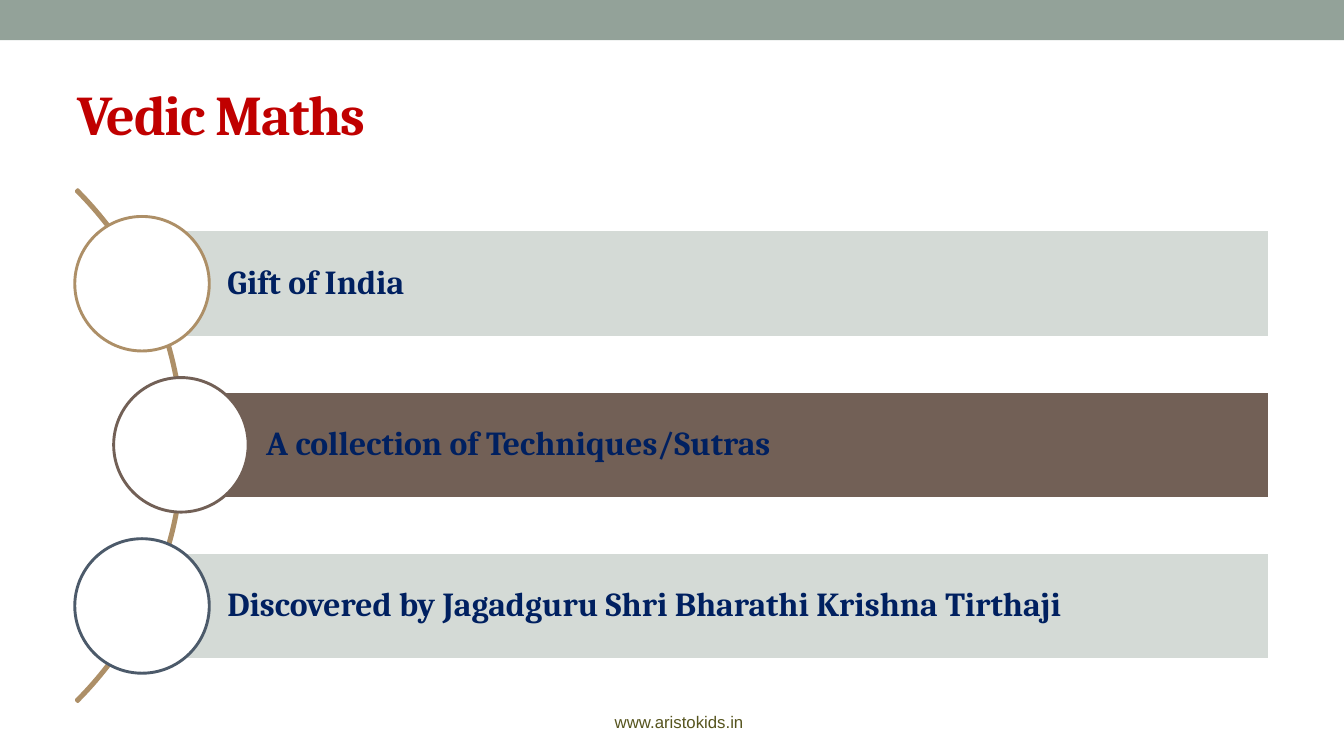
from dataclasses import dataclass

from pptx import Presentation
from pptx.dml.color import RGBColor
from pptx.enum.shapes import MSO_SHAPE
from pptx.enum.text import MSO_ANCHOR, PP_ALIGN
from pptx.util import Cm, Pt


@dataclass(frozen=True)
class Theme:
    band: str = "93A299"
    white: str = "FFFFFF"
    title: str = "C00000"
    text: str = "002060"
    footer: str = "56541E"
    tan: str = "AD8F67"
    brown: str = "726056"
    slate: str = "4C5A6A"
    pale: str = "D4DAD6"
    heading_font: str = "Cambria"
    footer_font: str = "Arial"
    title_size: float = 40
    text_size: float = 24
    footer_size: float = 12
    line_width: float = 2.08


class SlideBuilder:
    def __init__(self, slide, theme):
        self.slide = slide
        self.theme = theme

    def shape(self, kind, left, top, width, height, fill=None, line=None):
        shape = self.slide.shapes.add_shape(
            kind, Cm(left), Cm(top), Cm(width), Cm(height))
        shape.shadow.inherit = False
        if fill:
            shape.fill.solid()
            shape.fill.fore_color.rgb = RGBColor.from_string(fill)
        else:
            shape.fill.background()
        if line:
            shape.line.color.rgb = RGBColor.from_string(line)
            shape.line.width = Pt(self.theme.line_width)
        else:
            shape.line.fill.background()
        return shape

    def set_text(self, shape, text, font, size, color, bold=False,
                 align=PP_ALIGN.LEFT):
        frame = shape.text_frame
        frame.word_wrap = True
        frame.vertical_anchor = MSO_ANCHOR.MIDDLE
        paragraph = frame.paragraphs[0]
        paragraph.text = text
        paragraph.alignment = align
        paragraph.font.name = font
        paragraph.font.size = Pt(size)
        paragraph.font.bold = bold
        paragraph.font.color.rgb = RGBColor.from_string(color)
        return paragraph

    def title(self, text, left, top, width, height):
        theme = self.theme
        title = self.slide.shapes.title
        title.left, title.top = Cm(left), Cm(top)
        title.width, title.height = Cm(width), Cm(height)
        paragraph = self.set_text(title, text, theme.heading_font,
                                  theme.title_size, theme.title, bold=True)
        # Tighten the letters by one point
        paragraph.runs[0].font._element.set("spc", "-100")

    def footer(self, text, left, top, width, height):
        theme = self.theme
        box = self.slide.shapes.add_textbox(
            Cm(left), Cm(top), Cm(width), Cm(height))
        self.set_text(box, text, theme.footer_font, theme.footer_size,
                      theme.footer, align=PP_ALIGN.CENTER)

    def arc(self, left, top, diameter):
        arc = self.shape(MSO_SHAPE.BLOCK_ARC, left, top, diameter, diameter,
                         line=self.theme.tan)
        for index, value in enumerate((189, 27, 0.003)):
            arc.adjustments[index] = value

    def item(self, text, center_x, center_y, fill, ring):
        theme = self.theme
        right, bar_height, diameter = 31.99, 2.71, 3.39
        bar = self.shape(MSO_SHAPE.RECTANGLE, center_x,
                         center_y - bar_height / 2, right - center_x,
                         bar_height, fill, theme.white)
        paragraph = self.set_text(bar, text, theme.heading_font,
                                  theme.text_size, theme.text, bold=True)
        paragraph.line_spacing = 0.9
        frame = bar.text_frame
        frame.margin_left = Cm(2.15)
        frame.margin_top = frame.margin_right = frame.margin_bottom = Cm(0.17)
        self.shape(MSO_SHAPE.OVAL, center_x - diameter / 2,
                   center_y - diameter / 2, diameter, diameter,
                   theme.white, ring)


def main():
    presentation = Presentation()
    presentation.slide_width, presentation.slide_height = Cm(33.87), Cm(19.05)
    slide = presentation.slides.add_slide(presentation.slide_layouts[5])
    theme = Theme()
    builder = SlideBuilder(slide, theme)

    # Top band, title and footer
    builder.shape(MSO_SHAPE.RECTANGLE, 0, 0, 33.87, 1.01, theme.band)
    builder.title("Vedic Maths", 1.69, 1.48, 30.48, 2.75)
    builder.footer("www.aristokids.in", 11.4, 17.68, 11.43, 1.02)

    # Three items along the arc
    builder.arc(-13.61, 2.11, 18.24)
    items = [
        ("Gift of India", 3.58, theme.pale, theme.tan),
        ("A collection of Techniques/Sutras", 4.56, theme.brown, theme.brown),
        ("Discovered by Jagadguru Shri Bharathi Krishna Tirthaji", 3.58,
         theme.pale, theme.slate),
    ]
    first_center, pitch = 7.15, 4.06
    for row, (text, center_x, fill, ring) in enumerate(items):
        builder.item(text, center_x, first_center + row * pitch, fill, ring)

    presentation.save("out.pptx")


if __name__ == "__main__":
    main()
